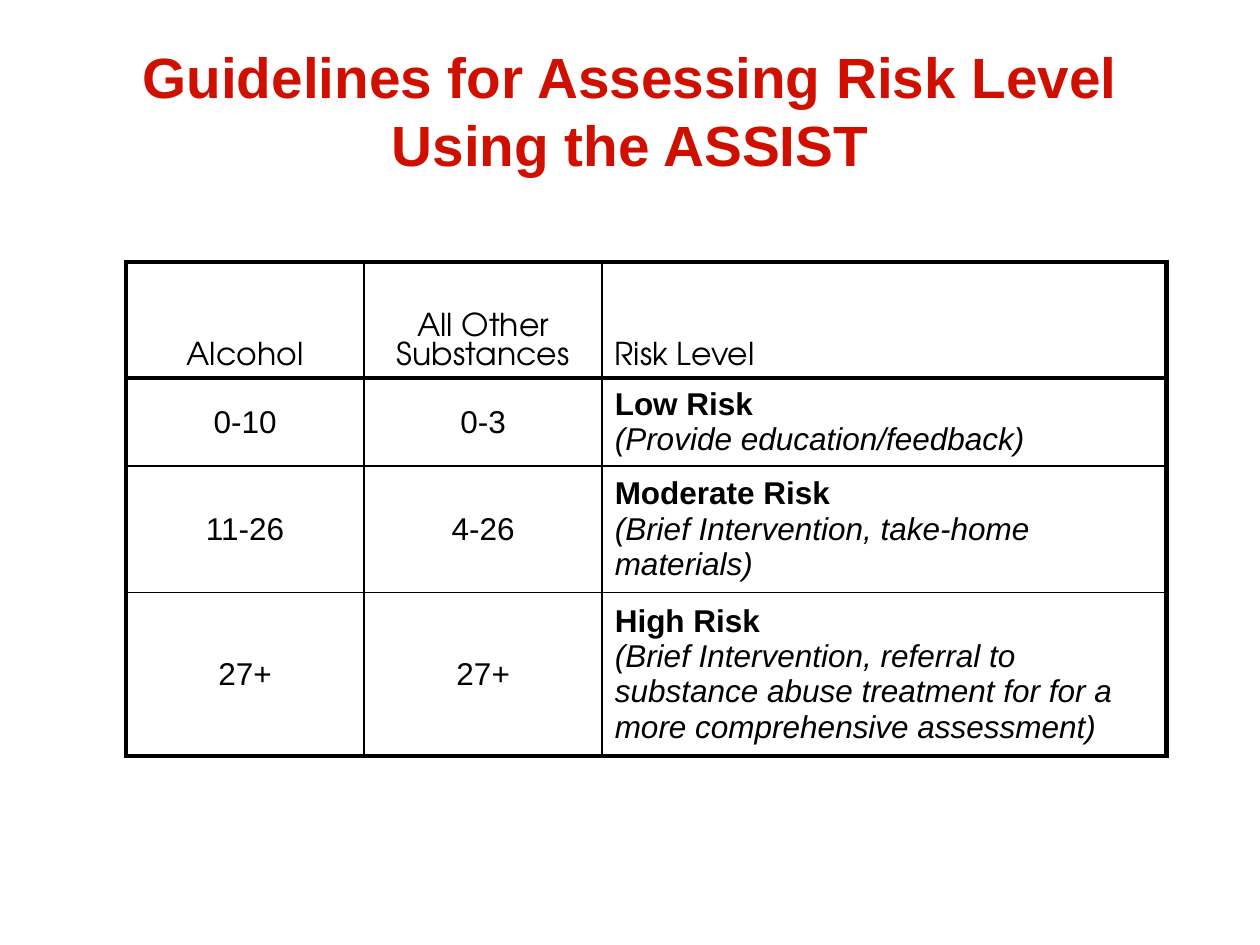
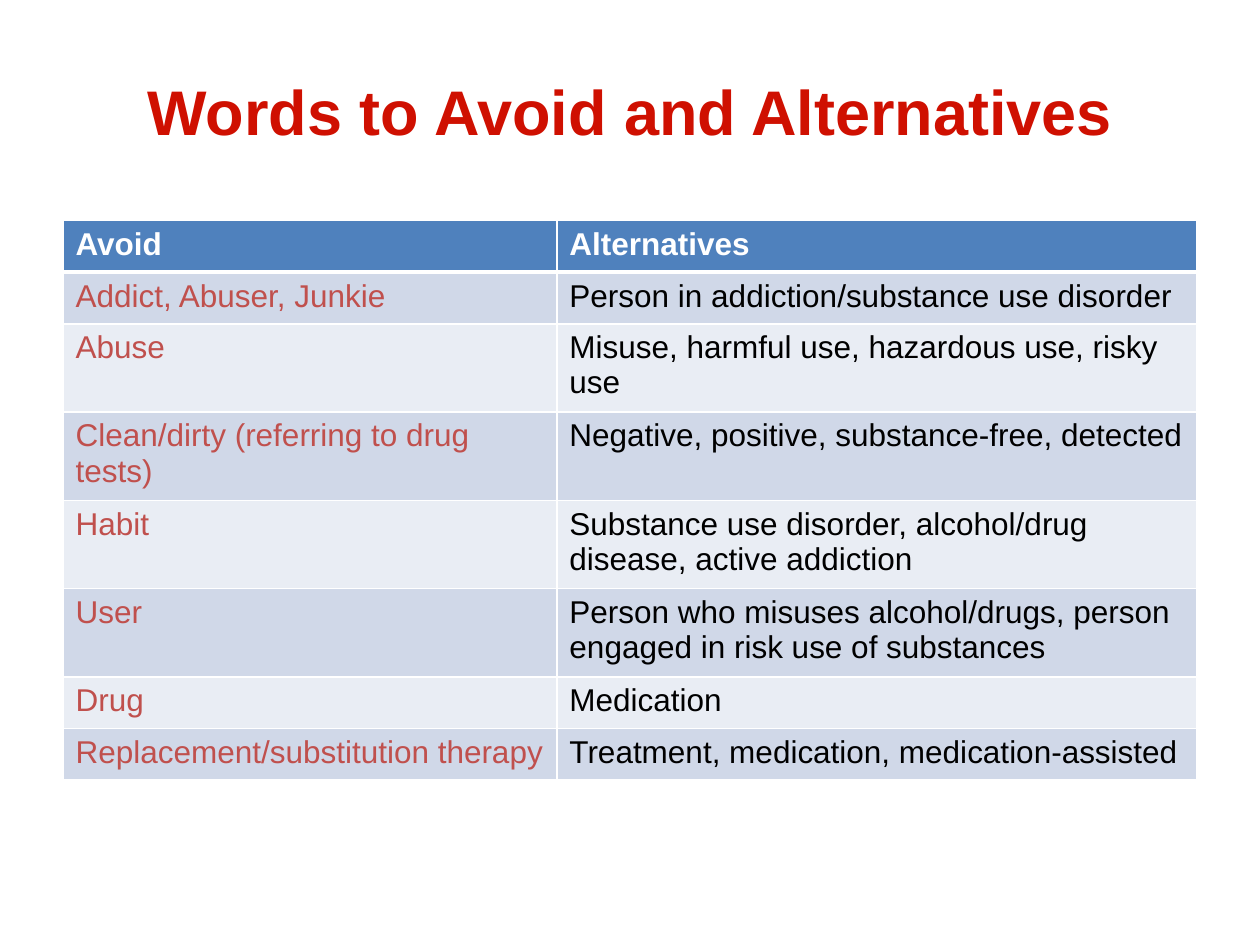
from dataclasses import dataclass
from typing import Any, NamedTuple

from lxml import etree
from pptx import Presentation
from pptx import util as u
from pptx.dml import color
from pptx.enum import text
from pptx.oxml import ns


@dataclass(frozen=True)
class Theme:
    title_red: str = "CF1001"
    avoid_red: str = "C0504D"
    header_blue: str = "4F81BD"
    bands: tuple[str, str] = ("D0D8E8", "E9EDF4")
    black: str = "000000"
    white: str = "FFFFFF"
    body_font: str = "Arial"
    label_font: str = "TeX Gyre Adventor"
    title_size: float = 36
    long_title_size: float = 32.4
    body_size: float = 18
    thin: float = 1
    thick: float = 3


THEME = Theme()
GRID_COLUMNS, GRID_ROWS = 100, 75
SLIDE_WIDTH, SLIDE_HEIGHT = u.Inches(10), u.Inches(7.5)


class Box(NamedTuple):
    left: float
    top: float
    width: float
    height: float


class Run(NamedTuple):
    words: str
    ink: str = THEME.black
    font: str = THEME.body_font
    bold: bool = False
    italic: bool = False
    size: float = THEME.body_size


class Cell(NamedTuple):
    lines: tuple[Run, ...]
    fill: str | None = None
    align: text.PP_ALIGN = text.PP_ALIGN.LEFT
    anchor: text.MSO_ANCHOR = text.MSO_ANCHOR.TOP


@dataclass(frozen=True)
class Grid:
    box: Box
    columns: tuple[float, ...]
    rows: tuple[float, ...]
    cells: list[list[Cell]]
    line_color: str
    outer_weight: float
    space_before: int = 0


TITLE_BOX = Box(5, 2.5, 90, 12.5)

RISK_HEADINGS = ("Alcohol", "All Other Substances", "Risk Level")
RISK_LEVELS = (
    ("0-10", "0-3", "Low Risk ", "(Provide education/feedback)"),
    ("11-26", "4-26", "Moderate Risk ", "(Brief Intervention, take-home materials)"),
    ("27+", "27+", "High Risk ",
     "(Brief Intervention, referral to substance abuse treatment for for a more comprehensive assessment)"),
)
WORDING_HEADINGS = ("Avoid", "Alternatives")
WORDINGS = (
    ("Addict, Abuser, Junkie", "Person in addiction/substance use disorder"),
    ("Abuse", "Misuse, harmful use, hazardous use, risky use"),
    ("Clean/dirty (referring to drug tests)", "Negative, positive, substance-free, detected"),
    ("Habit", "Substance use disorder, alcohol/drug disease, active addiction"),
    ("User", "Person who misuses alcohol/drugs, person engaged in risk use of substances"),
    ("Drug", "Medication"),
    ("Replacement/substitution therapy", "Treatment, medication, medication-assisted"),
)


def across(columns: float) -> int:
    return round(SLIDE_WIDTH * columns / GRID_COLUMNS)


def down(rows: float) -> int:
    return round(SLIDE_HEIGHT * rows / GRID_ROWS)


def place(box: Box) -> tuple[int, int, int, int]:
    return across(box.left), down(box.top), across(box.width), down(box.height)


def set_all(target: Any, values: dict[str, Any]) -> None:
    for name, value in values.items():
        setattr(target, name, value)


def write_lines(paragraph: Any, lines: tuple[Run, ...], align: text.PP_ALIGN) -> None:
    paragraph.alignment = align
    for index, line in enumerate(lines):
        if index:
            paragraph.add_line_break()
        run = paragraph.add_run()
        run.text = line.words
        set_all(run.font, {"name": line.font, "size": u.Pt(line.size),
                           "bold": line.bold, "italic": line.italic})
        run.font.color.rgb = color.RGBColor.from_string(line.ink)


def add_title(slide: Any, words: str, size: float) -> None:
    shape = slide.shapes.add_textbox(*place(TITLE_BOX))
    set_all(shape.text_frame, {"word_wrap": True, "vertical_anchor": text.MSO_ANCHOR.MIDDLE})
    title = Run(words, THEME.title_red, bold=True, size=size)
    write_lines(shape.text_frame.paragraphs[0], (title,), text.PP_ALIGN.CENTER)


def add_borders(table_cell: Any, line_color: str, weights: dict[str, float]) -> None:
    properties = table_cell._tc.get_or_add_tcPr()
    for side, weight in weights.items():
        line = etree.SubElement(properties, ns.qn(f"a:ln{side}"), w=str(u.Pt(weight)))
        fill = etree.SubElement(line, ns.qn("a:solidFill"))
        etree.SubElement(fill, ns.qn("a:srgbClr"), val=line_color)


def add_space_before(paragraph: Any, percent: int) -> None:
    space = etree.SubElement(paragraph._p.get_or_add_pPr(), ns.qn("a:spcBef"))
    etree.SubElement(space, ns.qn("a:spcPct"), val=str(percent * 1000))


def border_weights(grid: Grid, row: int, column: int) -> dict[str, float]:
    last_row, last_column = len(grid.rows) - 1, len(grid.columns) - 1
    outer, thin, thick = grid.outer_weight, THEME.thin, THEME.thick
    return {
        "L": outer if column == 0 else thin,
        "R": outer if column == last_column else thin,
        "T": outer if row == 0 else thick if row == 1 else thin,
        "B": thick if row == 0 else outer if row == last_row else thin,
    }


def add_grid(slide: Any, grid: Grid) -> None:
    frame = slide.shapes.add_table(len(grid.rows), len(grid.columns), *place(grid.box))
    table = frame.table
    set_all(table, {"first_row": False, "horz_banding": False})
    for column, width in zip(table.columns, grid.columns):
        column.width = across(width)
    for row, height in zip(table.rows, grid.rows):
        row.height = down(height)
    set_all(frame, {"width": across(grid.box.width), "height": down(grid.box.height)})
    for row_index, row_cells in enumerate(grid.cells):
        for column_index, cell in enumerate(row_cells):
            table_cell = table.cell(row_index, column_index)
            add_borders(table_cell, grid.line_color, border_weights(grid, row_index, column_index))
            if cell.fill:
                table_cell.fill.solid()
                table_cell.fill.fore_color.rgb = color.RGBColor.from_string(cell.fill)
            else:
                table_cell.fill.background()
            table_cell.vertical_anchor = cell.anchor
            paragraph = table_cell.text_frame.paragraphs[0]
            write_lines(paragraph, cell.lines, cell.align)
            if grid.space_before:
                add_space_before(paragraph, grid.space_before)


def risk_grid() -> Grid:
    center, left = text.PP_ALIGN.CENTER, text.PP_ALIGN.LEFT
    bottom, middle = text.MSO_ANCHOR.BOTTOM, text.MSO_ANCHOR.MIDDLE
    cells = [[Cell((Run(heading, font=THEME.label_font),), align=align, anchor=bottom)
              for heading, align in zip(RISK_HEADINGS, (center, center, left))]]
    for alcohol, others, level, action in RISK_LEVELS:
        scores = [Cell((Run(score),), align=center, anchor=middle) for score in (alcohol, others)]
        advice = Cell((Run(level, bold=True), Run(action, italic=True)), anchor=middle)
        cells.append([*scores, advice])
    return Grid(Box(10, 20.8, 82.5, 39.2), (18.9, 18.9, 44.8), (9.2,) + (6.3,) * len(RISK_LEVELS),
                cells, THEME.black, THEME.thick, space_before=20)


def wording_grid() -> Grid:
    cells = [[Cell((Run(heading, THEME.white, bold=True),), THEME.header_blue)
              for heading in WORDING_HEADINGS]]
    for index, pair in enumerate(WORDINGS):
        band = THEME.bands[index % 2]
        cells.append([Cell((Run(words, ink),), band)
                      for words, ink in zip(pair, (THEME.avoid_red, THEME.black))])
    heights = tuple(6.2 if row == 4 else 4.1 for row in range(len(cells)))
    return Grid(Box(5, 17.5, 90, 44.2), (39.2, 50.8), heights, cells, THEME.white, THEME.thin)


def main() -> None:
    presentation = Presentation()
    set_all(presentation, {"slide_width": SLIDE_WIDTH, "slide_height": SLIDE_HEIGHT})
    pages = (
        ("Guidelines for Assessing Risk Level Using the ASSIST", THEME.long_title_size, risk_grid()),
        ("Words to Avoid and Alternatives", THEME.title_size, wording_grid()),
    )
    for title, size, grid in pages:
        slide = presentation.slides.add_slide(presentation.slide_layouts[6])
        add_title(slide, title, size)
        add_grid(slide, grid)
    presentation.save("out.pptx")


if __name__ == "__main__":
    main()
